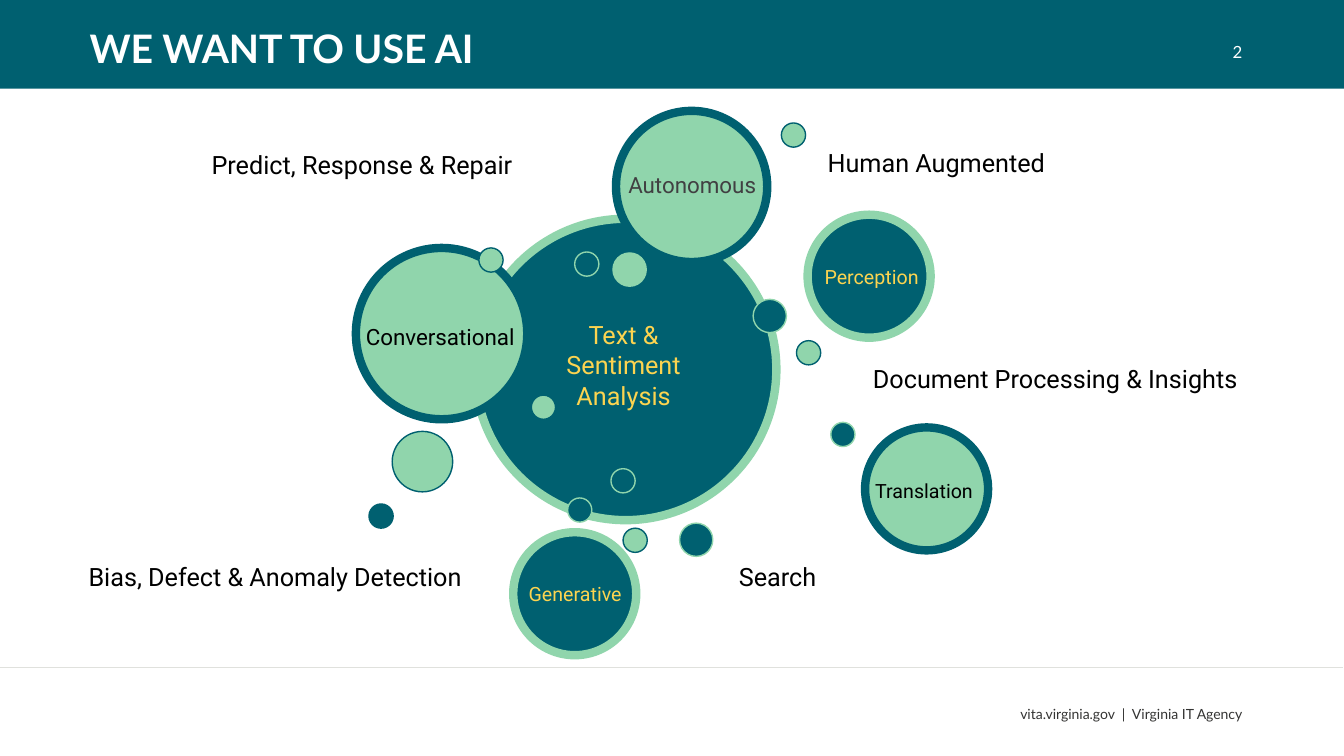
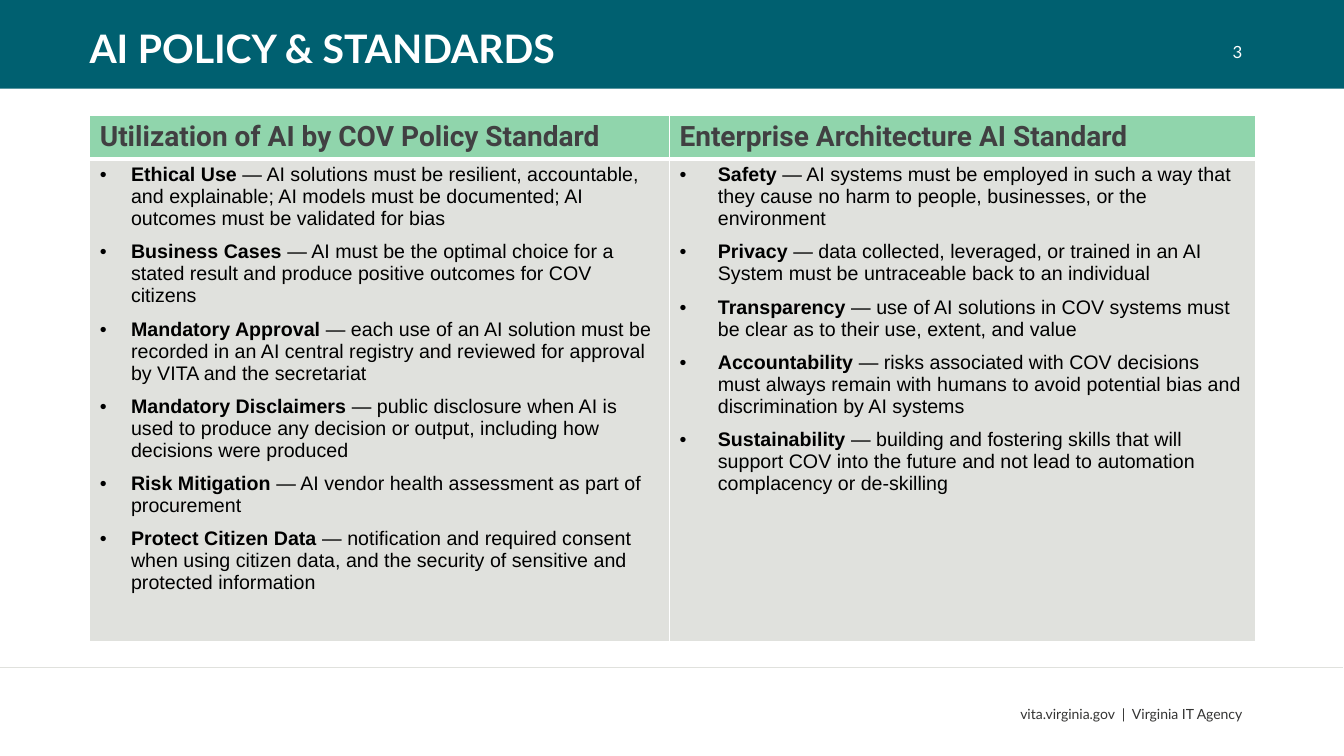
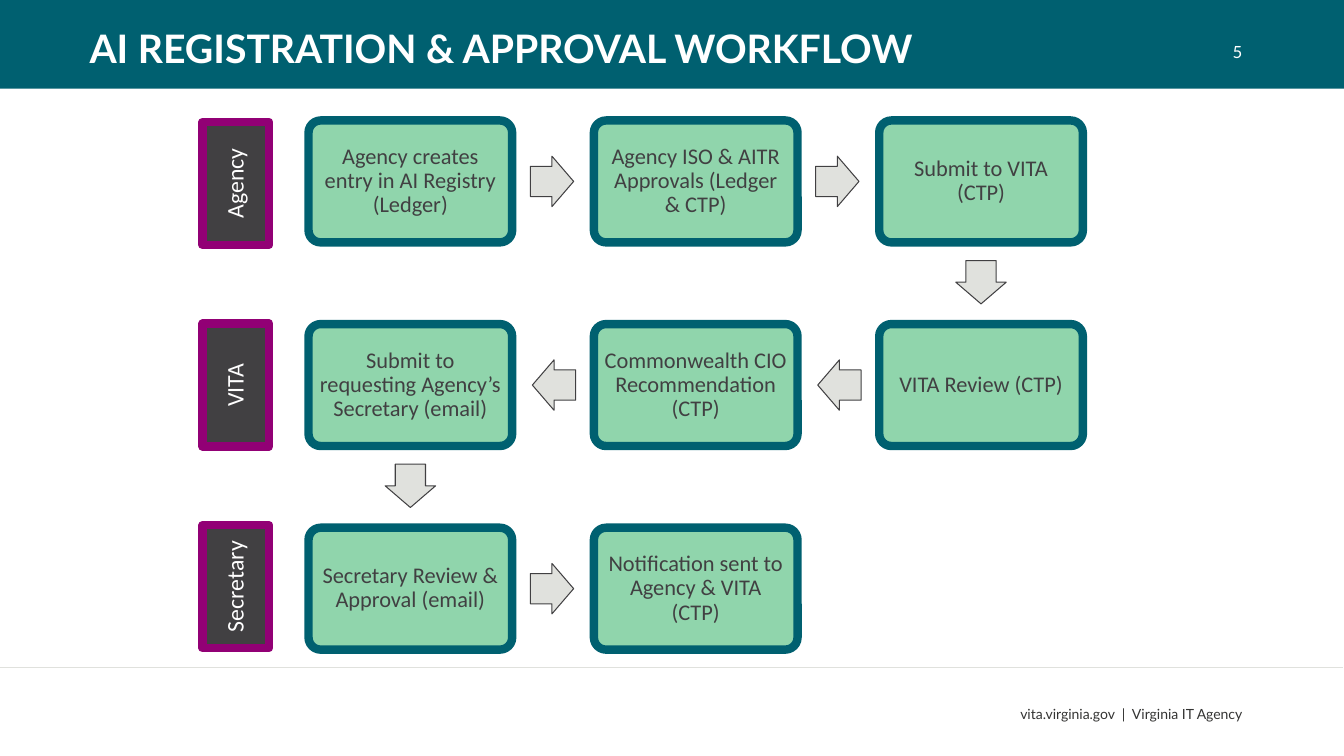
"""Build three slides on using, governing and approving AI."""
from lxml import etree
from pptx import Presentation
from pptx.dml.color import RGBColor
from pptx.enum import shapes, text
from pptx.oxml import ns
from pptx.util import Inches, Pt

TEAL = RGBColor(0x00, 0x60, 0x70)
MINT = RGBColor(0x90, 0xD5, 0xAC)
YELLOW = RGBColor(0xFC, 0xD4, 0x50)
PURPLE = RGBColor(0x92, 0x00, 0x75)
CHARCOAL = RGBColor(0x41, 0x40, 0x42)
FOOTER_GRAY = RGBColor(0x34, 0x34, 0x33)
PALE_GRAY = RGBColor(0xE0, 0xE1, 0xDD)
BLACK = RGBColor(0x00, 0x00, 0x00)
WHITE = RGBColor(0xFF, 0xFF, 0xFF)

LEFT, CENTER, RIGHT = text.PP_ALIGN.LEFT, text.PP_ALIGN.CENTER, text.PP_ALIGN.RIGHT
TOP, MIDDLE = text.MSO_ANCHOR.TOP, text.MSO_ANCHOR.MIDDLE
SHAPE = shapes.MSO_SHAPE

FOOTER = "vita.virginia.gov  |  Virginia IT Agency"

SMALL, MEDIUM, LARGE = 0.24, 0.33, 1.22
BUBBLES = [
    (4.71, 2.17, 2.99, TEAL, MINT),
    (5.63, 4.94, SMALL, TEAL, MINT),
    (7.9, 3.38, SMALL, MINT, TEAL),
    (6.74, 5.19, MEDIUM, TEAL, MINT),
    (5.7, 2.5, SMALL, TEAL, MINT),
    (5.27, 3.92, SMALL, MINT, TEAL),
    (3.53, 2.46, 1.7, MINT, TEAL),
    (6.08, 2.51, MEDIUM, MINT, MINT),
    (3.89, 4.28, 0.6, MINT, TEAL),
    (8.01, 2.13, LARGE, TEAL, MINT),
    (7.47, 2.97, MEDIUM, TEAL, MINT),
    (3.66, 5, SMALL, TEAL, TEAL),
    (6.06, 4.65, SMALL, TEAL, MINT),
    (8.58, 4.24, LARGE, MINT, TEAL),
    (8.24, 4.19, SMALL, TEAL, MINT),
    (5.09, 5.28, LARGE, TEAL, MINT),
    (6.18, 5.24, SMALL, MINT, TEAL),
    (6.11, 1.1, 1.5, MINT, TEAL),
    (4.75, 2.46, SMALL, MINT, TEAL),
    (7.75, 1.22, SMALL, MINT, TEAL),
]
USE_LABELS = [
    ("Document Processing & Insights", (8.56, 3.56, 3.85, 0.4), 18, BLACK, LEFT, False),
    ("Perception", (8.04, 2.58, 1.21, 0.34), 14, YELLOW, CENTER, True),
    ("Search", (7.23, 5.52, 0.98, 0.4), 18, BLACK, LEFT, False),
    ("Predict, Response & Repair", (2, 1.43, 3.22, 0.4), 18, BLACK, LEFT, False),
    ("Human Augmented", (8.11, 1.41, 2.38, 0.4), 18, BLACK, LEFT, False),
    ("Text & Sentiment Analysis", (5.41, 3.12, 1.55, 1.01), 18, YELLOW, CENTER, True),
    ("Conversational", (3.53, 3.16, 1.7, 0.37), 16, BLACK, LEFT, False),
    ("Generative", (5.12, 5.72, 1.17, 0.34), 14, YELLOW, CENTER, True),
    ("Translation", (8.56, 4.7, 1.21, 0.34), 14, BLACK, CENTER, True),
    ("Autonomous", (6.12, 1.65, 1.49, 0.37), 16, CHARCOAL, CENTER, False),
    ("Bias, Defect & Anomaly Detection", (0.65, 5.52, 4.16, 0.4), 18, BLACK, CENTER, True),
]

STANDARDS = [
    {
        "heading": "Utilization of AI by COV Policy Standard",
        "width": 5.75,
        "indent": 0.31,
        "items": [
            ("Ethical Use", " — AI solutions must be resilient, accountable, and explainable; "
             "AI models must be documented; AI outcomes must be validated for bias"),
            ("Business Cases", " — AI must be the optimal choice for a stated result and "
             "produce positive outcomes for COV citizens"),
            ("Mandatory Approval", " — each use of an AI solution must be recorded in an AI "
             "central registry and reviewed for approval by VITA and the secretariat"),
            ("Mandatory Disclaimers", " — public disclosure when AI is used to produce any "
             "decision or output, including how decisions were produced"),
            ("Risk Mitigation", " — AI vendor health assessment as part of procurement"),
            ("Protect Citizen Data", " — notification and required consent when using citizen "
             "data, and the security of sensitive and protected information"),
        ],
    },
    {
        "heading": "Enterprise Architecture AI Standard",
        "width": 5.81,
        "indent": 0.38,
        "items": [
            ("Safety", " — AI systems must be employed in such a way that they cause no harm "
             "to people, businesses, or the environment"),
            ("Privacy", " — data collected, leveraged, or trained in an AI System must be "
             "untraceable back to an individual"),
            ("Transparency", " — use of AI solutions in COV systems must be clear as to their "
             "use, extent, and value"),
            ("Accountability", " — risks associated with COV decisions must always remain with "
             "humans to avoid potential bias and discrimination by AI systems"),
            ("Sustainability", " — building and fostering skills that will support COV into the "
             "future and not lead to automation complacency or de-skilling"),
        ],
    },
]
ROW_HEIGHTS = [0.41, 4.79]

LANES = ["Agency", "VITA", "Secretary"]
STEPS = [
    ("Agency creates entry in AI Registry (Ledger)", 0, 0),
    ("Agency ISO & AITR Approvals (Ledger & CTP)", 1, 0),
    ("Submit to VITA (CTP)", 2, 0),
    ("VITA Review (CTP)", 2, 1),
    ("Commonwealth CIO Recommendation (CTP)", 1, 1),
    ("Submit to requesting Agency’s Secretary (email)", 0, 1),
    ("Secretary Review & Approval (email)", 0, 2),
    ("Notification sent to Agency & VITA (CTP)", 1, 2),
]
CARD_WIDTH, CARD_HEIGHT = 2.02, 1.21
COLUMN_STEP, ROW_STEP = 2.83, 2.02
FIRST_X, FIRST_Y = 4.07, 1.8
ARROW_WIDTH, ARROW_HEIGHT = 0.43, 0.5
ARROW_SHIFT = 0.01
LANE_X, LANE_Y, LANE_STEP = 2.34, 1.82, 2
LANE_WIDTH, LANE_HEIGHT = 1.22, 0.66
ROTATION = {(1, 0): 0, (0, 1): 90, (-1, 0): 180}


def write(paragraph, words, *, size, font="Lato", color=BLACK, bold=False,
          align=LEFT, line_spacing=None):
    """Append one formatted run to a paragraph."""
    paragraph.alignment = align
    if line_spacing:
        paragraph.line_spacing = line_spacing
    run = paragraph.add_run()
    run.text = words
    run.font.name = font
    run.font.size = Pt(size)
    run.font.bold = bold
    run.font.color.rgb = color


def add_text(slide, words, box, *, anchor=TOP, wrap=True, **style):
    """Add a text box holding one paragraph."""
    frame = slide.shapes.add_textbox(*map(Inches, box)).text_frame
    frame.word_wrap = wrap
    frame.vertical_anchor = anchor
    write(frame.paragraphs[0], words, **style)


def add_shape(slide, kind, box, fill, outline=None, weight=1):
    """Add a flat preset shape."""
    shape = slide.shapes.add_shape(kind, *map(Inches, box))
    shape.shadow.inherit = False
    shape.fill.solid()
    shape.fill.fore_color.rgb = fill
    if outline is None:
        shape.line.fill.background()
    else:
        shape.line.color.rgb = outline
        shape.line.width = Pt(weight)
    return shape


def around(x, y, width, height):
    """Return the box of a given size centred on a point."""
    return x - width / 2, y - height / 2, width, height


def fill_text(shape, words, **style):
    """Write centred text inside a workflow shape."""
    frame = shape.text_frame
    frame.word_wrap = True
    frame.vertical_anchor = MIDDLE
    frame.margin_left = frame.margin_right = Inches(0.07)
    frame.margin_top = frame.margin_bottom = Inches(0.07)
    write(frame.paragraphs[0], words, font="Calibri", align=CENTER, line_spacing=0.9, **style)


def add_slide(presentation, title, number):
    """Add a slide with the shared band, title, number and footer."""
    slide = presentation.slides.add_slide(presentation.slide_layouts[6])
    add_shape(slide, SHAPE.RECTANGLE, (0, 0, 13.33, 0.88), TEAL)
    rule = slide.shapes.add_connector(
        shapes.MSO_CONNECTOR.STRAIGHT, *map(Inches, (0, 6.62, 13.32, 6.62)))
    rule.line.color.rgb = PALE_GRAY
    rule.line.width = Pt(1)
    etree.SubElement(rule._element.spPr, ns.qn("a:effectLst"))
    add_text(slide, FOOTER, (7.92, 6.88, 4.5, 0.4), anchor=MIDDLE, size=10,
             color=FOOTER_GRAY, align=RIGHT)
    add_text(slide, str(number), (9.42, 0.31, 3, 0.4), anchor=MIDDLE, size=12,
             color=WHITE, align=RIGHT)
    add_text(slide, title, (0.79, 0.05, 11.5, 0.9), anchor=MIDDLE, size=28,
             color=WHITE, bold=True, line_spacing=0.9)
    return slide


def format_cell(cell, fill, bottom):
    """Give a cell white borders and a solid fill."""
    properties = cell._tc.get_or_add_tcPr()
    for side, weight in (("L", 1), ("R", 1), ("T", 1), ("B", bottom)):
        border = etree.SubElement(properties, ns.qn(f"a:ln{side}"), w=str(Pt(weight)))
        solid = etree.SubElement(border, ns.qn("a:solidFill"))
        etree.SubElement(solid, ns.qn("a:srgbClr"), val=str(WHITE))
    cell.fill.solid()
    cell.fill.fore_color.rgb = fill


def add_bullet(paragraph, indent):
    """Give a paragraph a hanging round bullet."""
    properties = paragraph._p.get_or_add_pPr()
    properties.set("marL", str(Inches(indent)))
    properties.set("indent", str(-Inches(indent)))
    etree.SubElement(properties, ns.qn("a:buFont"), typeface="Arial")
    etree.SubElement(properties, ns.qn("a:buChar"), char="•")
    paragraph.space_after = Pt(8)


def build_uses(presentation):
    """Draw the cluster of AI uses."""
    slide = add_slide(presentation, "WE WANT TO USE AI", 2)
    for left, top, diameter, fill, outline in BUBBLES:
        add_shape(slide, SHAPE.OVAL, (left, top, diameter, diameter), fill, outline,
                  weight=6 if diameter > 1 else 1)
    for words, box, size, color, align, wrap in USE_LABELS:
        add_text(slide, words, box, wrap=wrap, size=size, font="Roboto",
                 color=color, align=align)


def build_standards(presentation):
    """Draw the table of policy standards."""
    slide = add_slide(presentation, "AI POLICY & STANDARDS", 3)
    width = sum(standard["width"] for standard in STANDARDS)
    table = slide.shapes.add_table(
        len(ROW_HEIGHTS), len(STANDARDS),
        *map(Inches, (0.89, 1.14, width, sum(ROW_HEIGHTS)))).table
    table.horz_banding = False
    for row, height in zip(table.rows, ROW_HEIGHTS):
        row.height = Inches(height)
    for index, standard in enumerate(STANDARDS):
        table.columns[index].width = Inches(standard["width"])
        heading, body = table.cell(0, index), table.cell(1, index)
        format_cell(heading, MINT, bottom=3)
        format_cell(body, PALE_GRAY, bottom=1)
        write(heading.text_frame.paragraphs[0], standard["heading"], size=20,
              font="Roboto", color=CHARCOAL, bold=True)
        frame = body.text_frame
        for position, (term, meaning) in enumerate(standard["items"]):
            paragraph = frame.add_paragraph() if position else frame.paragraphs[0]
            add_bullet(paragraph, standard["indent"])
            write(paragraph, term, size=14, font="Arial", bold=True)
            write(paragraph, meaning, size=14, font="Arial")


def build_workflow(presentation):
    """Draw the approval steps in their lanes."""
    slide = add_slide(presentation, "AI REGISTRATION & APPROVAL WORKFLOW", 5)
    for words, column, row in STEPS:
        center = FIRST_X + column * COLUMN_STEP, FIRST_Y + row * ROW_STEP
        card = add_shape(slide, SHAPE.ROUNDED_RECTANGLE,
                         around(*center, CARD_WIDTH, CARD_HEIGHT), MINT, TEAL, 6)
        card.adjustments[0] = 0.1
        fill_text(card, words, size=16, color=CHARCOAL)
    for (_, column, row), (_, next_column, next_row) in zip(STEPS, STEPS[1:]):
        across, down = next_column - column, next_row - row
        x = FIRST_X + (column + across / 2) * COLUMN_STEP - across * ARROW_SHIFT
        y = FIRST_Y + (row + down / 2) * ROW_STEP - down * ARROW_SHIFT
        arrow = add_shape(slide, SHAPE.RIGHT_ARROW, around(x, y, ARROW_WIDTH, ARROW_HEIGHT),
                          PALE_GRAY, CHARCOAL, 0.75)
        arrow.adjustments[0], arrow.adjustments[1] = 0.6, 0.5
        arrow.rotation = ROTATION[across, down]
    for index, name in enumerate(LANES):
        lane = add_shape(slide, SHAPE.RECTANGLE,
                         around(LANE_X, LANE_Y + index * LANE_STEP, LANE_WIDTH, LANE_HEIGHT),
                         CHARCOAL, PURPLE, 6)
        lane.rotation = 270
        fill_text(lane, name, size=17, color=WHITE)


def main():
    """Build and save the presentation."""
    presentation = Presentation()
    presentation.slide_width, presentation.slide_height = Inches(13.33), Inches(7.5)
    build_uses(presentation)
    build_standards(presentation)
    build_workflow(presentation)
    presentation.save("out.pptx")


if __name__ == "__main__":
    main()
